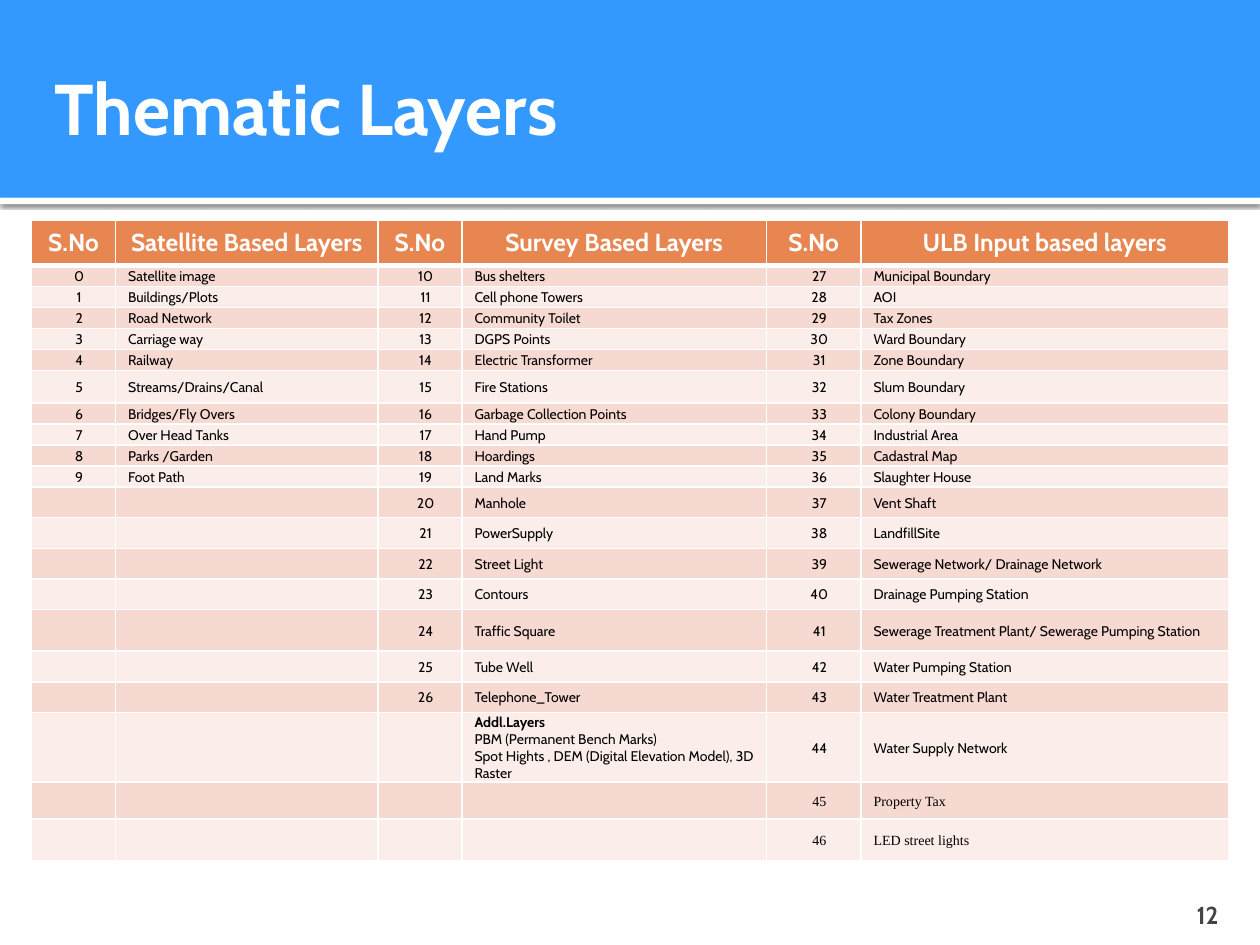
from dataclasses import dataclass
from itertools import zip_longest

from lxml.etree import SubElement
from pptx import Presentation
from pptx.dml.color import RGBColor
from pptx.enum.shapes import MSO_SHAPE as Shape
from pptx.enum.text import MSO_ANCHOR as Anchor, PP_ALIGN as Align
from pptx.oxml.ns import qn
from pptx.util import Inches, Pt


@dataclass(frozen=True)
class Theme:
    banner: str = "3399FF"
    white: str = "FFFFFF"
    black: str = "000000"
    grey: str = "454545"
    header: str = "E88651"
    bands: tuple = ("F6D9D0", "FBEDE9")
    font: str = "Cabin"
    serif: str = "Times New Roman"
    title_size: float = 41
    head_size: float = 14
    body_size: float = 8


@dataclass(frozen=True)
class Box:
    """A rectangle in grid units; the page is 120 columns by 90 rows."""
    left: float
    top: float
    width: float
    height: float

    def place(self):
        return [grid(n) for n in (self.left, self.top, self.width, self.height)]


THEME = Theme()
PAGE_COLUMNS, PAGE_ROWS, UNITS_PER_INCH = 120, 90, 12

COLUMN_WIDTHS = (8, 25, 8, 29, 9, 35)
ROW_HEIGHTS = (4.3, *[2] * 5, 3.1, *[2] * 4, *[2.92] * 4, 3.95, *[2.92] * 2, 6.65, 3.5, 3.95)
SERIF_FROM = 45

SATELLITE = ["Satellite image", "Buildings/Plots", "Road Network", "Carriage way", "Railway",
             "Streams/Drains/Canal", "Bridges/Fly Overs", "Over Head Tanks", "Parks /Garden",
             "Foot Path"]
SURVEY = ["Bus shelters", "Cell phone Towers", "Community Toilet", "DGPS Points",
          "Electric Transformer", "Fire Stations", "Garbage Collection Points", "Hand Pump",
          "Hoardings", "Land Marks", "Manhole", "PowerSupply", "Street Light", "Contours",
          "Traffic Square", "Tube Well", "Telephone_Tower"]
ADDITIONAL = ["Addl.Layers", "PBM (Permanent Bench Marks)",
              "Spot Hights , DEM (Digital Elevation Model), 3D Raster"]
ULB_INPUT = ["Municipal Boundary", "AOI", "Tax Zones", "Ward Boundary", "Zone Boundary",
             "Slum Boundary", "Colony Boundary", "Industrial Area", "Cadastral Map",
             "Slaughter House", "Vent Shaft", "LandfillSite",
             "Sewerage Network/ Drainage Network", "Drainage Pumping Station",
             "Sewerage Treatment Plant/ Sewerage Pumping Station", "Water Pumping Station",
             "Water Treatment Plant", "Water Supply Network", "Property Tax",
             "LED street lights"]
GROUPS = (("Satellite Based Layers", SATELLITE), ("Survey Based Layers", SURVEY),
          ("ULB Input based layers", ULB_INPUT))


def grid(units):
    return Inches(units / UNITS_PER_INCH)


def color(value):
    return RGBColor.from_string(value)


def add_span(para, text, size, shade, bold=False, font=THEME.font):
    span = para.add_run()
    span.text = text
    span.font.size, span.font.name, span.font.bold = Pt(size), font, bold
    span.font.color.rgb = color(shade)


def set_margins(target, left, top, right, bottom):
    target.margin_left, target.margin_top = Inches(left), Inches(top)
    target.margin_right, target.margin_bottom = Inches(right), Inches(bottom)


def add_bar(page, box, shade):
    bar = page.shapes.add_shape(Shape.RECTANGLE, *box.place())
    bar.shadow.inherit = False
    bar.fill.solid()
    bar.fill.fore_color.rgb = color(shade)
    bar.line.fill.background()
    return bar


def add_drop_shadow(bar):
    effects = bar._element.spPr.find(qn("a:effectLst"))
    shadow = SubElement(effects, qn("a:outerShdw"), blurRad=str(Pt(2.5)), dist=str(Pt(0.8)),
                        dir="5400000", algn="tl", rotWithShape="0")
    shade = SubElement(shadow, qn("a:srgbClr"), val=THEME.black)
    SubElement(shade, qn("a:alpha"), val="60000")


def add_label(page, box, text, size, shade, margins, anchor, align):
    frame = page.shapes.add_textbox(*box.place()).text_frame
    frame.word_wrap = True
    frame.vertical_anchor = anchor
    set_margins(frame, *margins)
    para = frame.paragraphs[0]
    para.alignment = align
    add_span(para, text, size, shade, bold=True)


def add_banner(page, box):
    strip = Box(box.left, box.top + box.height, box.width, 0.6)
    add_drop_shadow(add_bar(page, strip, THEME.white))
    add_bar(page, box, THEME.banner)
    title = Box(box.left + 4, box.top + 2, box.width - 8, box.height - 2.4)
    add_label(page, title, "Thematic Layers", THEME.title_size, THEME.white,
              (0.1, 0.05, 0.05, 0.05), Anchor.MIDDLE, Align.LEFT)


def add_page_number(page, box):
    add_label(page, box, "12", THEME.head_size, THEME.grey,
              (0.1, 0.05, 0.1, 0), Anchor.BOTTOM, Align.RIGHT)


def style_cell(cell, row):
    """Borders go in before the fill, as the schema orders them."""
    properties = cell._tc.get_or_add_tcPr()
    widths = {"L": 1, "R": 1, "T": 3 if row == 1 else 1, "B": 3 if row == 0 else 1}
    for side, width in widths.items():
        line = SubElement(properties, qn(f"a:ln{side}"), w=str(Pt(width)))
        SubElement(SubElement(line, qn("a:solidFill")), qn("a:srgbClr"), val=THEME.white)
    cell.fill.solid()
    cell.fill.fore_color.rgb = color(THEME.bands[(row - 1) % 2] if row else THEME.header)
    cell.vertical_anchor = Anchor.MIDDLE
    if row:
        set_margins(cell, 0.1, 0.01, 0.01, 0)


def fill_cell(cell, lines, centered, **style):
    frame = cell.text_frame
    for index, line in enumerate(lines):
        para = frame.add_paragraph() if index else frame.paragraphs[0]
        para.alignment = Align.CENTER if centered else Align.LEFT
        bold = style.get("bold") or (len(lines) > 1 and index == 0)
        add_span(para, line, **{**style, "bold": bold})
    if not lines:
        end = frame.paragraphs[0]._p.get_or_add_endParaRPr()
        end.set("sz", str(THEME.body_size * 100))


def numbered_rows():
    """Rows of six cells, each a list of lines, numbered on across the groups."""
    columns, number = [], 0
    for _, names in GROUPS:
        columns.append([[str(number + step)] for step in range(len(names))])
        columns.append([[name] for name in names])
        number += len(names)
    columns[3].append(ADDITIONAL)
    return zip_longest(*columns, fillvalue=[])


def add_layer_table(page, box):
    table = page.shapes.add_table(len(ROW_HEIGHTS), len(COLUMN_WIDTHS), *box.place()).table
    for column, width in zip(table.columns, COLUMN_WIDTHS):
        column.width = grid(width)
    for row, height in zip(table.rows, ROW_HEIGHTS):
        row.height = grid(height)
    header = [[text] for name, _ in GROUPS for text in ("S.No", name)]
    for row, cells in enumerate([header, *numbered_rows()]):
        serif = row and int(cells[4][0]) >= SERIF_FROM
        body = dict(size=THEME.body_size, shade=THEME.black,
                    font=THEME.serif if serif else THEME.font)
        head = dict(size=THEME.head_size, shade=THEME.white, bold=True)
        for column, lines in enumerate(cells):
            cell = table.cell(row, column)
            style_cell(cell, row)
            fill_cell(cell, lines, row == 0 or column % 2 == 0, **(body if row else head))


def main():
    deck = Presentation()
    deck.slide_width, deck.slide_height = grid(PAGE_COLUMNS), grid(PAGE_ROWS)
    page = deck.slides.add_slide(deck.slide_layouts[6])
    add_banner(page, Box(0, 0, PAGE_COLUMNS, 18.84))
    add_page_number(page, Box(107.64, 84.96, 9.6, 3.6))
    add_layer_table(page, Box(3, 21, sum(COLUMN_WIDTHS), sum(ROW_HEIGHTS)))
    deck.save("out.pptx")


if __name__ == "__main__":
    main()
